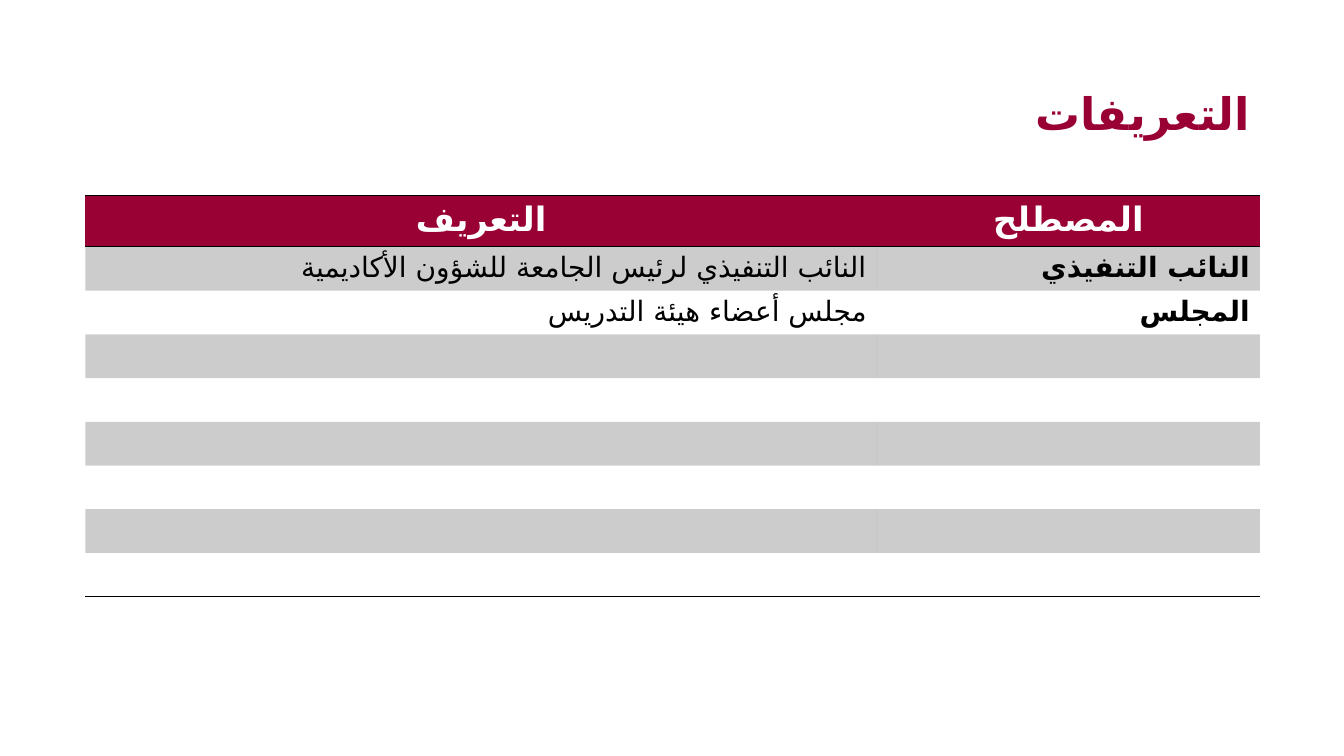
from pptx import Presentation
from pptx.dml.color import RGBColor
from pptx.enum import text
from pptx.oxml import parse_xml
from pptx.oxml.ns import nsdecls, qn
from pptx.util import Cm, Pt
from lxml import etree

FONT = "Roboto"
ARABIC_FONT = "DejaVu Sans"  # Roboto has no Arabic letters
MAROON = RGBColor(0x99, 0x00, 0x33)
WHITE = RGBColor(0xFF, 0xFF, 0xFF)
BLACK = RGBColor(0x00, 0x00, 0x00)
PLAIN_TABLE_STYLE = "{2D5ABB26-0587-4C30-8999-92F81FD0307C}"

LEFT, WIDTH = Cm(2.15), Cm(29.6)
COLUMN_WIDTHS = [Cm(19.95), Cm(9.65)]
HEADER_HEIGHT, ROW_HEIGHT = Cm(1.29), Cm(1.1)
BODY_ROWS = 8

HEADER = ["التعريف", "المصطلح"]
DEFINITIONS = [
    ["النائب التنفيذي لرئيس الجامعة للشؤون الأكاديمية", "النائب التنفيذي"],
    ["مجلس أعضاء هيئة التدريس", "المجلس"],
]


def format_paragraph(para, size, color, bold, align):
    para.alignment = align
    para.font.size = Pt(size)
    for span in para.runs:
        span.font.size = Pt(size)
        span.font.bold = bold
        span.font.color.rgb = color
        span.font.name = FONT
        arabic_font = etree.SubElement(span.font._element, qn("a:cs"))
        arabic_font.set("typeface", ARABIC_FONT)


def add_title(page, words):
    title = page.shapes.title
    title.left, title.top, title.width, title.height = LEFT, Cm(2.03), WIDTH, Cm(1.63)
    title.text_frame.text = words
    title.text_frame.auto_size = text.MSO_AUTO_SIZE.SHAPE_TO_FIT_TEXT
    format_paragraph(title.text_frame.paragraphs[0], 32, MAROON, True, text.PP_ALIGN.RIGHT)


def fill_cell(cell, color, opacity=100):
    cell.fill.solid()
    cell.fill.fore_color.rgb = color
    if opacity < 100:
        color_node = cell._tc.tcPr.find(".//" + qn("a:srgbClr"))
        etree.SubElement(color_node, qn("a:alpha")).set("val", str(opacity * 1000))


def add_borders(cell, *sides):
    """Draw black lines on the sides, given in the order lnT, lnB."""
    properties = cell._tc.get_or_add_tcPr()
    for position, side in enumerate(sides):
        properties.insert(position, parse_xml(
            f'<a:{side} {nsdecls("a")} w="{Pt(1)}"><a:solidFill>'
            f'<a:srgbClr val="{BLACK}"/></a:solidFill></a:{side}>'))


def write_cell(cell, words, size, color, bold, align):
    cell.text_frame.text = words
    para = cell.text_frame.paragraphs[0]
    format_paragraph(para, size, color, bold, align)
    para._p.get_or_add_pPr().set("rtl", "1")


def add_definitions_table(page):
    height = HEADER_HEIGHT + BODY_ROWS * ROW_HEIGHT
    frame = page.shapes.add_table(BODY_ROWS + 1, 2, LEFT, Cm(4.93), WIDTH, height)
    table = frame.table
    table._tbl.tblPr.find(qn("a:tableStyleId")).text = PLAIN_TABLE_STYLE
    for column, width in zip(table.columns, COLUMN_WIDTHS):
        column.width = width

    table.rows[0].height = HEADER_HEIGHT
    for cell, words in zip(table.rows[0].cells, HEADER):
        write_cell(cell, words, 24, WHITE, True, text.PP_ALIGN.CENTER)
        fill_cell(cell, MAROON)
        add_borders(cell, "lnT", "lnB")

    blank_rows = [["", ""]] * (BODY_ROWS - len(DEFINITIONS))
    for number, entries in enumerate(DEFINITIONS + blank_rows, start=1):
        table.rows[number].height = ROW_HEIGHT
        for column, words in enumerate(entries):
            cell = table.cell(number, column)
            write_cell(cell, words, 20, BLACK, column == 1, text.PP_ALIGN.RIGHT)
            if number % 2:
                fill_cell(cell, BLACK, opacity=20)
            else:
                cell.fill.background()
            if number == BODY_ROWS:
                add_borders(cell, "lnB")


def main():
    deck = Presentation()
    deck.slide_width, deck.slide_height = Cm(33.87), Cm(19.05)
    page = deck.slides.add_slide(deck.slide_layouts.get_by_name("Title Only"))
    add_title(page, "التعريفات")
    add_definitions_table(page)
    deck.save("out.pptx")


if __name__ == "__main__":
    main()
